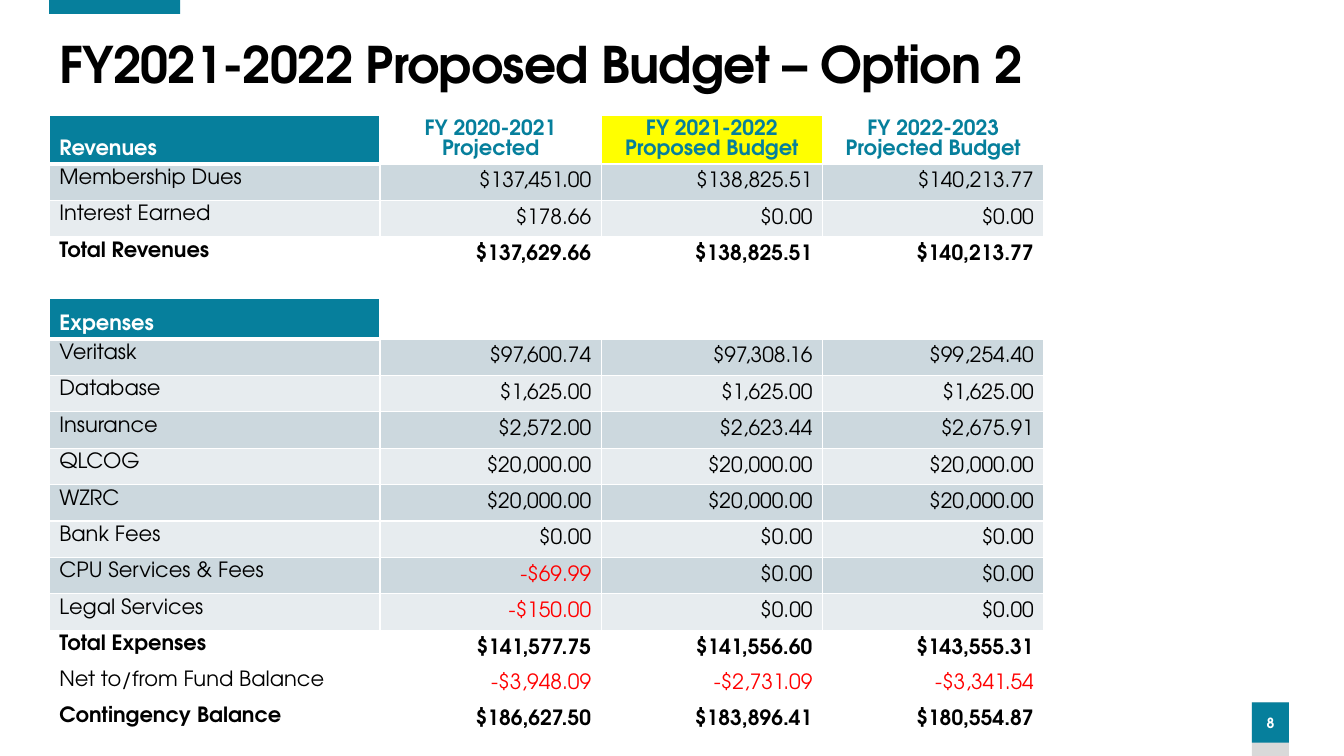
from lxml.etree import SubElement
from pptx import Presentation
from pptx.dml.color import RGBColor
from pptx.enum.shapes import MSO_SHAPE
from pptx.enum.text import MSO_ANCHOR as ANCHOR, PP_ALIGN as ALIGN
from pptx.oxml.ns import qn
from pptx.util import Pt

FONT = "TeX Gyre Adventor"
COLORS = {
    "teal": "067F9C", "white": "FFFFFF", "black": "000000", "red": "FF0000",
    "yellow": "FFFF00", "dark_band": "CCD8DE", "light_band": "E7ECEF",
    "gray": "D9D9D9",
}
TABLE_LEFT = 35.2
COLUMN_WIDTHS = [236.2, 158.1, 158.1, 158.1]
HEADER_HEIGHT, ROW_HEIGHT = 29.2, 26

REVENUE_HEADER = ["Revenues", "FY 2020-2021\nProjected",
                  "FY 2021-2022\nProposed Budget", "FY 2022-2023\nProjected Budget"]
REVENUES = [
    ["Membership Dues", "$137,451.00", "$138,825.51", "$140,213.77"],
    ["Interest Earned", "$178.66", "$0.00", "$0.00"],
    ["Total Revenues", "$137,629.66", "$138,825.51", "$140,213.77"],
]
EXPENSE_HEADER = ["Expenses", "", "", ""]
EXPENSES = [
    ["Veritask", "$97,600.74", "$97,308.16", "$99,254.40"],
    ["Database", "$1,625.00", "$1,625.00", "$1,625.00"],
    ["Insurance", "$2,572.00", "$2,623.44", "$2,675.91"],
    ["QLCOG", "$20,000.00", "$20,000.00", "$20,000.00"],
    ["WZRC", "$20,000.00", "$20,000.00", "$20,000.00"],
    ["Bank Fees", "$0.00", "$0.00", "$0.00"],
    ["CPU Services & Fees", "-$69.99", "$0.00", "$0.00"],
    ["Legal Services", "-$150.00", "$0.00", "$0.00"],
    ["Total Expenses", "$141,577.75", "$141,556.60", "$143,555.31"],
]
BALANCES = [
    ["Net to/from Fund Balance", "-$3,948.09", "-$2,731.09", "-$3,341.54"],
    ["Contingency Balance", "$186,627.50", "$183,896.41", "$180,554.87"],
]


def rgb(name):
    return RGBColor.from_string(COLORS[name])


def style(paragraph, size, color, bold=False, align=ALIGN.LEFT):
    font = paragraph.font
    font.name, font.size, font.bold = FONT, Pt(size), bold
    font.color.rgb = rgb(color)
    paragraph.alignment = align


def add_block(slide, left, top, width, height, color):
    block = slide.shapes.add_shape(MSO_SHAPE.RECTANGLE, Pt(left), Pt(top),
                                   Pt(width), Pt(height))
    block.shadow.inherit = False
    block.fill.solid()
    block.fill.fore_color.rgb = rgb(color)
    block.line.fill.background()
    return block


def add_title(slide, text):
    title = slide.shapes.title
    title.left, title.top, title.width, title.height = Pt(35.2), Pt(24.5), Pt(880), Pt(47)
    frame = title.text_frame
    frame.text = text
    frame.word_wrap = True
    frame.vertical_anchor = ANCHOR.MIDDLE
    heading = frame.paragraphs[0]
    style(heading, 36, "black", bold=True)
    heading.line_spacing = 0.9
    heading.runs[0].font._element.set("spc", "-60")


def add_page_number(slide, number):
    add_block(slide, 894.2, 501.8, 26.6, 38.2, "gray")
    frame = add_block(slide, 894.2, 501.8, 26.6, 28.8, "teal").text_frame
    frame.margin_left = frame.margin_right = 0
    frame.vertical_anchor = ANCHOR.MIDDLE
    frame.text = number
    style(frame.paragraphs[0], 10, "white", bold=True, align=ALIGN.CENTER)


def set_borders(cell, **widths):
    """Draw white borders; the keys are L, R, T and B, in that order."""
    properties = cell._tc.get_or_add_tcPr()
    for position, (side, width) in enumerate(widths.items()):
        line = SubElement(properties, qn(f"a:ln{side}"), w=str(Pt(width)))
        SubElement(SubElement(line, qn("a:solidFill")), qn("a:srgbClr"), val=COLORS["white"])
        properties.insert(position, line)


def fill_cell(cell, text, fill, color, bold, align, anchor):
    cell.text = text
    cell.vertical_anchor = anchor
    cell.fill.solid()
    cell.fill.fore_color.rgb = rgb(fill)
    for paragraph in cell.text_frame.paragraphs:
        style(paragraph, 15, color, bold, align)


def fill_header(table, header):
    for column, text in enumerate(header):
        cell = table.cell(0, column)
        if column == 0:
            fill_cell(cell, text, "teal", "white", True, ALIGN.LEFT, ANCHOR.BOTTOM)
            set_borders(cell, L=1, T=1, B=3)
        else:
            fill = "yellow" if "Proposed" in text else "white"
            fill_cell(cell, text, fill, "teal", True, ALIGN.CENTER, ANCHOR.BOTTOM)


def fill_amounts(table, row, values, fill):
    bold = values[0].startswith(("Total", "Contingency"))
    for column, text in enumerate(values):
        cell = table.cell(row, column)
        color = "red" if text.startswith("-") else "black"
        align, anchor = (ALIGN.RIGHT, ANCHOR.MIDDLE) if column else (ALIGN.LEFT, ANCHOR.TOP)
        fill_cell(cell, text, fill, color, bold, align, anchor)
        if fill != "white":
            set_borders(cell, L=1, R=1, T=1, B=1)


def add_budget_table(slide, top, rows, header=None):
    """Add a table; with a header, the rows above the total are banded."""
    first = 1 if header else 0
    height = first * HEADER_HEIGHT + len(rows) * ROW_HEIGHT
    table = slide.shapes.add_table(len(rows) + first, len(COLUMN_WIDTHS), Pt(TABLE_LEFT),
                                   Pt(top), Pt(sum(COLUMN_WIDTHS)), Pt(height)).table
    table.first_row = table.horz_banding = False
    for column, width in zip(table.columns, COLUMN_WIDTHS):
        column.width = Pt(width)
    for row in table.rows:
        row.height = Pt(ROW_HEIGHT)
    if header:
        table.rows[0].height = Pt(HEADER_HEIGHT)
        fill_header(table, header)
    for index, values in enumerate(rows):
        banded = header and index < len(rows) - 1
        fill = ("dark_band", "light_band")[index % 2] if banded else "white"
        fill_amounts(table, index + first, values, fill)


def main():
    presentation = Presentation()
    presentation.slide_width, presentation.slide_height = Pt(960), Pt(540)
    slide = presentation.slides.add_slide(presentation.slide_layouts[5])
    add_page_number(slide, "8")
    add_block(slide, 35.2, 0, 93.6, 10, "teal")
    add_title(slide, "FY2021-2022 Proposed Budget – Option 2")
    add_budget_table(slide, 82.3, REVENUES, REVENUE_HEADER)
    add_budget_table(slide, 213, EXPENSES, EXPENSE_HEADER)
    add_budget_table(slide, 475.4, BALANCES)
    presentation.save("out.pptx")


if __name__ == "__main__":
    main()
